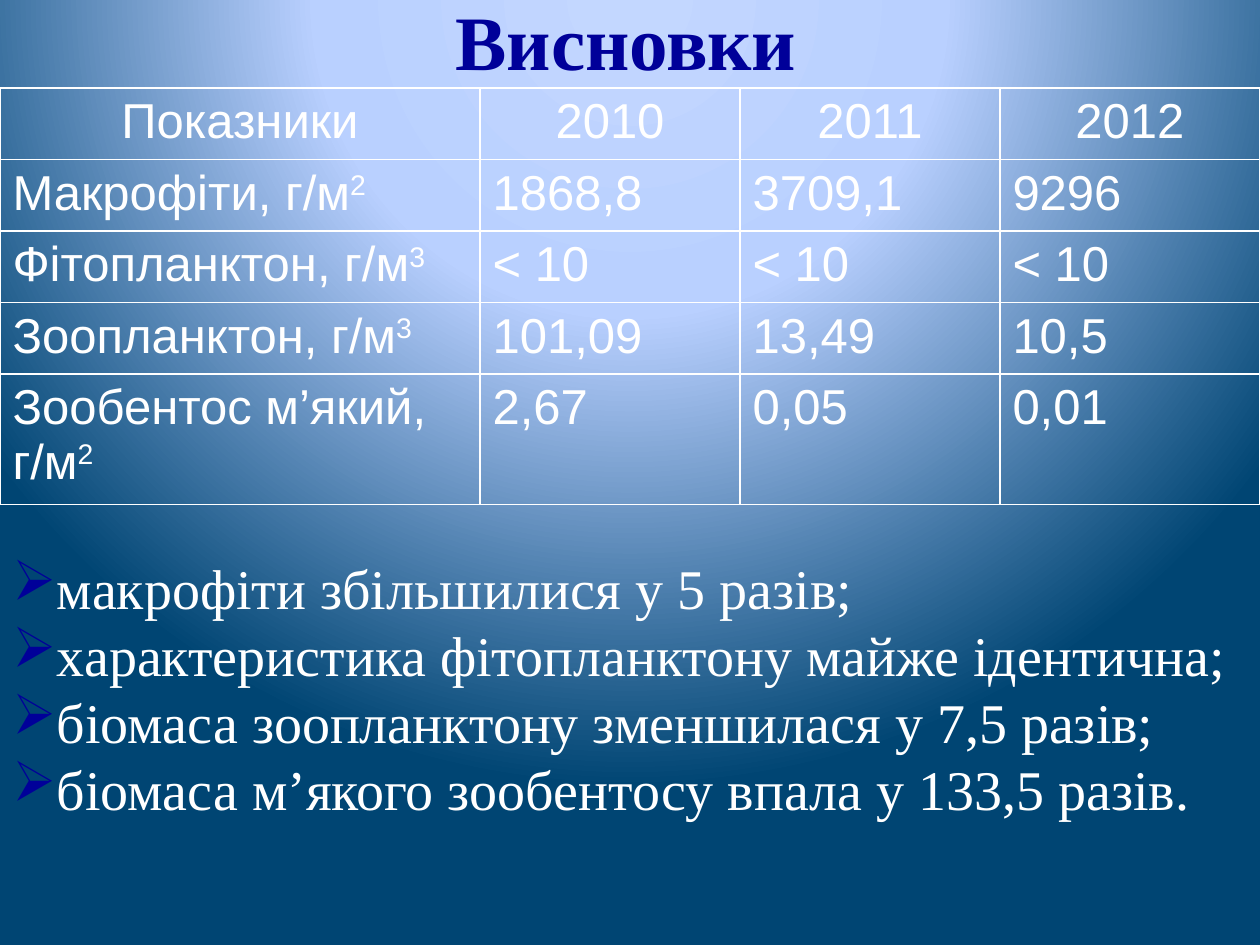
from dataclasses import dataclass

from lxml import etree
from pptx import Presentation
from pptx.dml.color import RGBColor
from pptx.enum.text import MSO_ANCHOR, PP_ALIGN
from pptx.oxml import parse_xml
from pptx.oxml.ns import nsdecls, qn
from pptx.util import Inches, Pt

CENTER, JUSTIFY, LEFT = PP_ALIGN.CENTER, PP_ALIGN.JUSTIFY, PP_ALIGN.LEFT
MIDDLE = MSO_ANCHOR.MIDDLE


@dataclass(frozen=True)
class Theme:
    accent: str = "000099"
    light: str = "FFFFFF"
    backdrop: tuple = ((0, "C3D7FF"), (40, "B9D0FF"), (100, "004573"))
    serif: str = "Times New Roman"
    sans: str = "Arial"
    title_size: int = 44
    list_size: int = 32
    list_pitch: float = 38.3
    table_size: int = 28
    border: int = 1


THEME = Theme()
WIDTH, HEIGHT = 10, 7.5
LABEL_SHARE = 0.381
ROW_HEIGHTS = [0.53] * 4 + [0.97]

HEADER = ["Показники", "2010", "2011", "2012"]
# Label, exponent of the unit, then one value per year
MEASURES = [
    ("Макрофіти, г/м", "2", "1868,8", "3709,1", "9296"),
    ("Фітопланктон, г/м", "3", "< 10", "< 10", "< 10"),
    ("Зоопланктон, г/м", "3", "101,09", "13,49", "10,5"),
    ("Зообентос м’який, г/м", "2", "2,67", "0,05", "0,01"),
]
FINDINGS = [
    "макрофіти збільшилися у 5 разів;",
    "характеристика фітопланктону майже ідентична;",
    "біомаса зоопланктону зменшилася у 7,5 разів;",
    "біомаса м’якого зообентосу впала у 133,5 разів.",
]


def paint_background(page):
    """Fill the page with a circular gradient centred above its top edge."""
    fill = page.background.fill
    fill.gradient()
    gradient = page.background._cSld.find(".//" + qn("a:gradFill"))
    for child in list(gradient):
        gradient.remove(child)
    stops = etree.SubElement(gradient, qn("a:gsLst"))
    for share, color in THEME.backdrop:
        stop = etree.SubElement(stops, qn("a:gs"), pos=str(share * 1000))
        etree.SubElement(stop, qn("a:srgbClr"), val=color)
    circle = etree.SubElement(gradient, qn("a:path"))
    circle.set("path", "circle")
    etree.SubElement(circle, qn("a:fillToRect"),
                     l="50000", t="-80000", r="50000", b="180000")


def style(para, size, face, color, align, bold=False):
    para.alignment = align
    para.font.size = Pt(size)
    para.font.name = face
    para.font.bold = bold
    para.font.color.rgb = RGBColor.from_string(color)


def add_text_frame(page, left, top, width, height):
    box = page.shapes.add_textbox(Inches(left), Inches(top),
                                  Inches(width), Inches(height))
    frame = box.text_frame
    frame.word_wrap = True
    frame.vertical_anchor = MIDDLE
    return frame


def add_title(page, text):
    frame = add_text_frame(page, 0.47, -0.31, 9, 1.25)
    para = frame.paragraphs[0]
    para.text = text
    style(para, THEME.title_size, THEME.serif, THEME.accent, CENTER, bold=True)


def outline_cell(cell):
    cell.fill.background()
    properties = cell._tc.get_or_add_tcPr()
    for index, side in enumerate("LRTB"):
        properties.insert(index, parse_xml(
            f'<a:ln{side} {nsdecls("a")} w="{Pt(THEME.border)}"><a:solidFill>'
            f'<a:srgbClr val="{THEME.light}"/></a:solidFill></a:ln{side}>'))


def fill_cell(cell, text, align, exponent=""):
    outline_cell(cell)
    para = cell.text_frame.paragraphs[0]
    para.add_run().text = text
    if exponent:
        span = para.add_run()
        span.text = exponent
        span._r.get_or_add_rPr().set("baseline", "30000")
    style(para, THEME.table_size, THEME.sans, THEME.light, align)


def add_measures_table(page):
    frame = page.shapes.add_table(
        len(ROW_HEIGHTS), len(HEADER), Inches(0), Inches(0.7),
        Inches(WIDTH), Inches(sum(ROW_HEIGHTS)))
    table = frame.table
    table.first_row = table.horz_banding = False

    # Wide label column, the years share the rest equally
    label_width = WIDTH * LABEL_SHARE
    year_width = (WIDTH - label_width) / (len(HEADER) - 1)
    for index, column in enumerate(table.columns):
        column.width = Inches(year_width if index else label_width)
    for row, height in zip(table.rows, ROW_HEIGHTS):
        row.height = Inches(height)

    for column, text in enumerate(HEADER):
        fill_cell(table.cell(0, column), text, CENTER)
    for row, (label, exponent, *values) in enumerate(MEASURES, start=1):
        fill_cell(table.cell(row, 0), label, LEFT, exponent)
        for column, value in enumerate(values, start=1):
            fill_cell(table.cell(row, column), value, LEFT)


def add_bullet(para, symbol, color):
    properties = para._p.get_or_add_pPr()
    bullet_color = etree.SubElement(properties, qn("a:buClr"))
    etree.SubElement(bullet_color, qn("a:srgbClr"), val=color)
    etree.SubElement(properties, qn("a:buChar"), char=symbol)
    # Default run properties must follow the bullet
    properties.append(properties.find(qn("a:defRPr")))


def add_findings(page):
    top = 3.98
    frame = add_text_frame(page, 0, top, WIDTH, HEIGHT - top)
    frame.margin_bottom = Inches(0.62)
    for index, text in enumerate(FINDINGS):
        para = frame.add_paragraph() if index else frame.paragraphs[0]
        para.text = text
        para.line_spacing = Pt(THEME.list_pitch)
        style(para, THEME.list_size, THEME.serif, THEME.light, JUSTIFY)
        add_bullet(para, "➢", THEME.accent)


def main():
    deck = Presentation()
    deck.slide_width, deck.slide_height = Inches(WIDTH), Inches(HEIGHT)
    page = deck.slides.add_slide(deck.slide_layouts[6])
    paint_background(page)
    add_title(page, "Висновки")
    add_measures_table(page)
    add_findings(page)
    deck.save("out.pptx")


if __name__ == "__main__":
    main()
